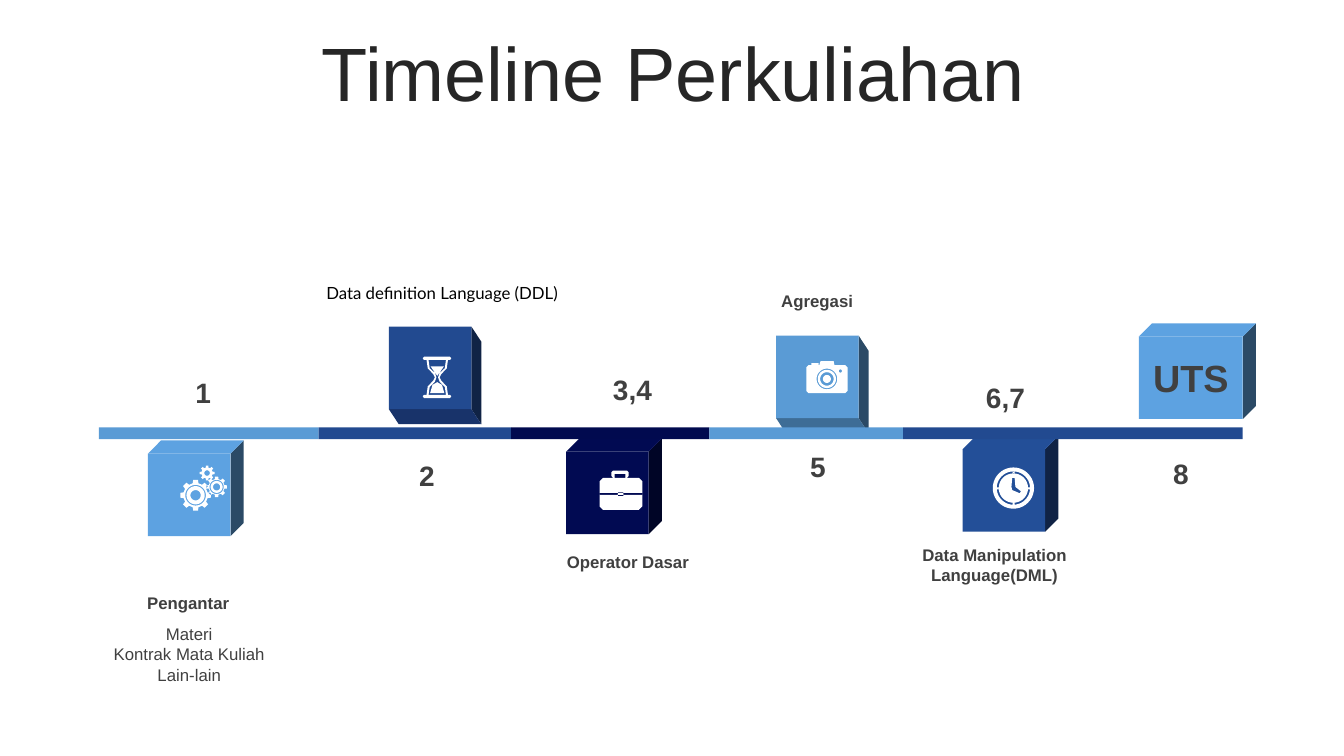
from dataclasses import dataclass
from math import cos, sin, pi
from pptx import Presentation
from pptx.dml.color import RGBColor
from pptx.enum.shapes import MSO_SHAPE as Kind
from pptx.enum.text import MSO_ANCHOR as Anchor, PP_ALIGN as Align
from pptx.util import Cm, Pt


@dataclass(frozen=True)
class Tone:
    face: str
    lit: str
    side: str
    under: str


class Theme:
    light = Tone("5A9BD5", "5DA2E1", "2B4A66", "3E6D96")
    blue = Tone("224A90", "234F98", "102345", "18336A")
    navy = Tone("010A4F", "010A52", "000526", "010738")
    white, black, title, text = "FFFFFF", "000000", "262626", "404040"
    font, alt = "Arial", "Lato"
    head, big, mark, body = 54, 27, 20, 12


# Basic parts
def paint(shape, color):
    shape.shadow.inherit = False
    shape.fill.solid()
    shape.fill.fore_color.rgb = RGBColor.from_string(color)
    shape.line.fill.background()
    return shape


def rect(slide, x, y, w, h, color):
    box = slide.shapes.add_shape(Kind.RECTANGLE, Cm(x), Cm(y), Cm(w), Cm(h))
    return paint(box, color)


def write(frame, text, size=Theme.body, color=Theme.text, bold=False,
          font=Theme.font, anchor=Anchor.TOP, line=None, before=None):
    frame.word_wrap = True
    frame.vertical_anchor = anchor
    for i, row in enumerate(text.split("\n")):
        par = frame.add_paragraph() if i else frame.paragraphs[0]
        par.alignment = Align.CENTER
        par.line_spacing = line
        par.space_before = before
        run = par.add_run()
        run.text = row
        run.font.size, run.font.bold, run.font.name = Pt(size), bold, font
        run.font.color.rgb = RGBColor.from_string(color)


def label(slide, x, y, w, h, text, **look):
    box = slide.shapes.add_textbox(Cm(x), Cm(y), Cm(w), Cm(h))
    write(box.text_frame, text, **look)


def outline(slide, x, y, loops, color):
    """Draw closed loops as one shape; nested loops cut holes."""
    build = None
    for loop in loops:
        first, *rest = [(Cm(x + px), Cm(y + py)) for px, py in loop]
        if build is None:
            build = slide.shapes.build_freeform(*first, scale=1.0)
        else:
            build.move_to(*first)
        build.add_line_segments(rest, close=True)
    paint(build.convert_to_shape(), color)


# Loops for the icons
def ring(x, y, *radii):
    turns = [2 * pi * i / 40 for i in range(40)]
    return [[(x + r * cos(t), y + r * sin(t)) for t in turns] for r in radii]


def box(x, y, w, h, cut=0):
    r, b = x + w, y + h
    return [(x + cut, y), (r - cut, y), (r, y + cut), (r, b - cut),
            (r - cut, b), (x + cut, b), (x, b - cut), (x, y + cut)]


def cog(x, y, tip, root):
    step = 2 * pi / 8
    spots = [(tip, -.2), (tip, .2), (root, .3), (root, .7)]
    return [(x + r * cos((i + s) * step), y + r * sin((i + s) * step))
            for i in range(8) for r, s in spots]


def mirror(x, half):
    return ([(x - d, y) for d, y in half]
            + [(x + d, y) for d, y in reversed(half)])


def gears():
    return [cog(1.2, 1.05, .39, .31), *ring(1.2, 1.05, .26, .23, .13),
            cog(1.73, .84, .26, .2), *ring(1.73, .84, .18, .15, .09),
            cog(1.49, .49, .19, .14), *ring(1.49, .49, .07)]


def glass():
    outer = [(.27, .84), (.24, 1.05), (.1, 1.2), (.06, 1.28),
             (.1, 1.36), (.24, 1.51), (.27, 1.72)]
    inner = [(.22, .84), (.19, 1.05), (.06, 1.17), (.02, 1.28),
             (.06, 1.39), (.19, 1.52), (.22, 1.72)]
    sand = [(.17, 1), (.08, 1.13), (0, 1.24)]
    heap = [(0, 1.4), (.12, 1.47), (.18, 1.68)]
    caps = [box(.86, y, .71, .08, .03) for y in (.76, 1.72)]
    return caps + [mirror(1.22, half) for half in (outer, inner, sand, heap)]


def case():
    return [box(.84, .66, 1.08, .81, .09), box(.84, 1.04, 1.08, .05),
            box(1.3, 1.02, .14, .1), box(1.14, .48, .43, .18, .04),
            box(1.22, .56, .27, .1)]


def camera():
    return [box(.76, .74, 1.04, .71, .06), box(.89, .69, .18, .05),
            [(1.12, .64), (1.45, .64), (1.47, .74), (1.09, .74)],
            *ring(1.28, 1.09, .26, .23, .17, .1), *ring(1.62, .89, .04)]


def clock():
    ticks = [box(1.26 + .39 * dx, .96 + .39 * dy, .05, .05)
             for dx, dy in ((0, 1), (0, -1), (1, 0), (-1, 0))]
    hands = [(1.25, .72), (1.31, .72), (1.33, .95), (1.47, 1.06),
             (1.44, 1.11), (1.25, 1.03), (1.23, .95)]
    return [*ring(1.28, .98, .52, .42, .37), *ticks, hands]


# Regions of the slide
def cube(slide, x, y, w, h, tone, up):
    """A front face with a side, and a top face or an underside."""
    dx, dy = (.33, -.33) if up else (.25, .38)
    edge = 0 if up else h
    outline(slide, x, y, [[(w, 0), (w + dx, dy), (w + dx, h + dy), (w, h)]],
            tone.side)
    outline(slide, x, y, [[(0, edge), (w, edge), (w + dx, edge + dy),
                           (dx, edge + dy)]], tone.lit if up else tone.under)
    return rect(slide, x, y, w, h, tone.lit if up else tone.face)


def step(slide, x, y, tone, up, icon, mark, at, name, spot, look):
    cube(slide, x, y, 2.08, 2.08, tone, up)
    outline(slide, x, y, icon(), Theme.white)
    number(slide, x + at[0], y + at[1], mark)
    label(slide, x + spot[0], y + spot[1], 6.55, .77, name, **look)


def number(slide, x, y, mark):
    label(slide, x, y, 2.36, 1.12, mark, size=Theme.mark, bold=True)


def exam(slide, x, y):
    face = cube(slide, x, y, 2.62, 2.08, Theme.light, True)
    write(face.text_frame, "UTS", size=Theme.big, bold=True,
          anchor=Anchor.MIDDLE)
    number(slide, x - .12, y + 2.9, "8")


def bar(slide, x, y, h):
    tones = (Theme.light, Theme.blue, Theme.navy, Theme.light, Theme.blue)
    for tone, w in zip(tones, (5.54, 4.85, 5, 4.88, 8.56)):
        rect(slide, x, y, w, h, tone.face)
        x += w


def main():
    deck = Presentation()
    deck.slide_width, deck.slide_height = Cm(33.87), Cm(19.05)
    slide = deck.slides.add_slide(deck.slide_layouts[6])
    label(slide, .89, .94, 32.16, 2.01, "Timeline Perkuliahan",
          size=Theme.head, color=Theme.title, anchor=Anchor.MIDDLE,
          line=.9, before=Pt(10))
    bold = dict(bold=True)
    plain = dict(font=Theme.alt, color=Theme.black)
    steps = [
        (3.73, 11.43, Theme.light, True, gears, "1", (.21, -2.08),
         "Pengantar", (-2.26, 3.38), bold),
        (9.8, 8.23, Theme.blue, False, glass, "2", (-.22, 3.2),
         "Data definition Language (DDL)", (-1.93, -1.22), plain),
        (14.27, 11.38, Theme.navy, True, case, "3,4", (.49, -2.11),
         "Operator Dasar", (-1.72, 2.41), bold),
        (19.56, 8.46, Theme.light, False, camera, "5", (-.13, 2.74),
         "Agregasi", (-2.24, -1.25), bold),
        (24.26, 11.32, Theme.blue, True, clock, "6,7", (-.1, -1.85),
         "Data Manipulation Language(DML)", (-2.47, 2.29), bold),
    ]
    for item in steps:
        step(slide, *item)
    label(slide, 1.47, 15.6, 6.6, 2.31,
          "Materi\nKontrak Mata Kuliah\nLain-lain")
    bar(slide, 2.49, 10.77, .3)
    exam(slide, 28.7, 8.48)
    deck.save("out.pptx")


if __name__ == "__main__":
    main()
